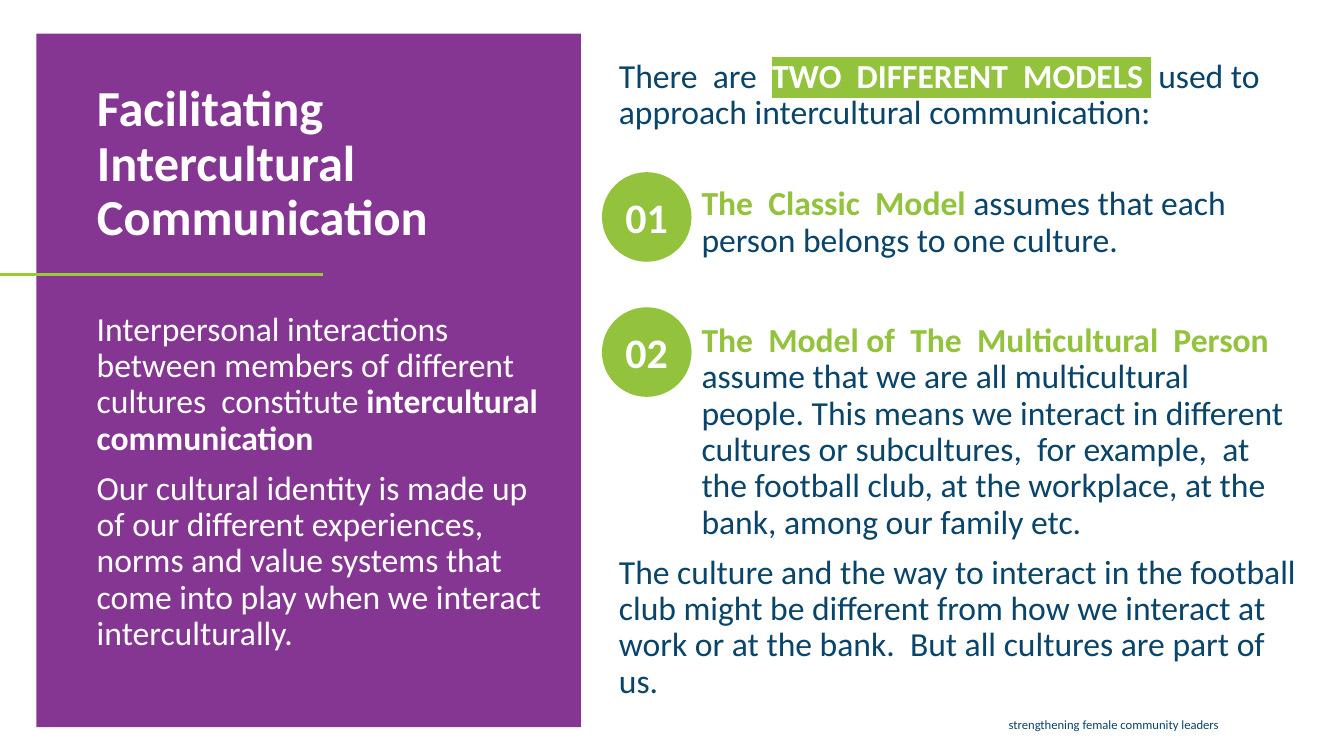
from dataclasses import dataclass

from lxml.etree import SubElement
from pptx import Presentation
from pptx.dml.color import RGBColor
from pptx.enum.shapes import MSO_CONNECTOR, MSO_SHAPE
from pptx.enum.text import MSO_ANCHOR, MSO_AUTO_SIZE, PP_ALIGN
from pptx.oxml import parse_xml
from pptx.oxml.ns import nsdecls, qn
from pptx.util import Pt

PURPLE = RGBColor(0x85, 0x36, 0x93)
GREEN = RGBColor(0x93, 0xC2, 0x3D)
LIME = RGBColor(0x99, 0xCB, 0x38)
NAVY = RGBColor(0x09, 0x44, 0x6A)
WHITE = RGBColor(0xFF, 0xFF, 0xFF)
FONT = "Calibri"


@dataclass(frozen=True)
class Span:
    text: str
    color: RGBColor = NAVY
    bold: bool = False
    highlight: RGBColor | None = None


@dataclass(frozen=True)
class Para:
    spans: tuple[Span, ...]
    before: float = 0
    indent: float = 0


@dataclass(frozen=True)
class Badge:
    label: str
    top: float


INTRODUCTION = (
    Para((
        Span("Interpersonal interactions between members of different  cultures  constitute ", WHITE),
        Span("intercultural  communication", WHITE, True),
    )),
    Para((
        Span("Our cultural identity is made up of our different experiences, norms and value "
             "systems that come into play when we interact interculturally.", WHITE),
    ), before=10),
)

MODELS = (
    Para((
        Span("There  are  "),
        Span("TWO  DIFFERENT  MODELS ", WHITE, True, GREEN),
        Span(" used to approach intercultural communication:"),
    )),
    Para((
        Span("The  Classic  Model ", GREEN, True),
        Span("assumes that each person belongs to one culture."),
    ), before=39, indent=59),
    Para((
        Span("The  Model of  The  Multicultural  Person ", GREEN, True),
        Span("assume that we are all multicultural people. This means we interact in different "
             "cultures or subcultures,  for example,  at the football club, at the workplace, "
             "at the bank, among our family etc."),
    ), before=46, indent=59),
    Para((
        Span("The culture and the way to interact in the football club might be different from "
             "how we interact at work or at the bank.  But all cultures are part of us."),
    ), before=10),
)

BADGES = (Badge("01", 123), Badge("02", 219.5))


def write_text(shape, paras: tuple[Para, ...], *, size: float, spacing: float = 0.9,
               align: PP_ALIGN = PP_ALIGN.LEFT, anchor: MSO_ANCHOR = MSO_ANCHOR.TOP) -> None:
    frame = shape.text_frame
    frame.word_wrap = True
    frame.auto_size = MSO_AUTO_SIZE.NONE
    frame.vertical_anchor = anchor
    for index, content in enumerate(paras):
        para = frame.add_paragraph() if index else frame.paragraphs[0]
        para.alignment = align
        para.line_spacing = spacing
        para.space_before = Pt(content.before)
        if content.indent:
            properties = para._p.get_or_add_pPr()
            properties.set("marL", str(Pt(content.indent)))
            properties.set("indent", "0")
        for span in content.spans:
            run = para.add_run()
            run.text = span.text
            run.font.name = FONT
            run.font.size = Pt(size)
            run.font.bold = span.bold
            run.font.color.rgb = span.color
            if span.highlight is not None:
                fill = run._r.rPr.find(qn("a:solidFill"))
                fill.addnext(parse_xml(
                    f'<a:highlight {nsdecls("a")}><a:srgbClr val="{span.highlight}"/></a:highlight>'))


def add_block(page, kind: MSO_SHAPE, left: float, top: float, width: float, height: float,
              color: RGBColor):
    block = page.shapes.add_shape(kind, Pt(left), Pt(top), Pt(width), Pt(height))
    block.shadow.inherit = False
    block.fill.solid()
    block.fill.fore_color.rgb = color
    block.line.fill.background()
    return block


def add_text(page, left: float, top: float, width: float, height: float,
             paras: tuple[Para, ...], *, size: float = 24, align: PP_ALIGN = PP_ALIGN.LEFT) -> None:
    box = page.shapes.add_textbox(Pt(left), Pt(top), Pt(width), Pt(height))
    write_text(box, paras, size=size, align=align)


def add_title(page, text: str, panel) -> None:
    title = page.shapes.title
    title.left, title.top, title.width, title.height = Pt(62), Pt(56), Pt(312), Pt(156)
    write_text(title, (Para((Span(text, WHITE, True),)),), size=36)
    title.element.addprevious(panel.element)


def add_rule(page, left: float, right: float, top: float) -> None:
    rule = page.shapes.add_connector(MSO_CONNECTOR.STRAIGHT, Pt(left), Pt(top), Pt(right), Pt(top))
    rule.line.color.rgb = LIME
    rule.line.width = Pt(2.25)
    SubElement(rule.element.spPr, qn("a:effectLst"))


def add_badge(page, badge: Badge) -> None:
    circle = add_block(page, MSO_SHAPE.OVAL, 430, badge.top, 64, 64, GREEN)
    write_text(circle, (Para((Span(badge.label, WHITE, True),)),), size=30, spacing=1.0,
               align=PP_ALIGN.CENTER, anchor=MSO_ANCHOR.MIDDLE)


def main() -> None:
    deck = Presentation()
    deck.slide_width, deck.slide_height = Pt(960), Pt(540)
    page = deck.slides.add_slide(deck.slide_layouts.get_by_name("Title Only"))

    panel = add_block(page, MSO_SHAPE.RECTANGLE, 26, 24, 389, 495.5, PURPLE)
    add_title(page, "Facilitating Intercultural Communication", panel)
    add_text(page, 100, 510, 777.5, 18, (Para((Span("strengthening female community leaders"),)),),
             size=9, align=PP_ALIGN.RIGHT)
    add_text(page, 435, 39, 499.5, 470, MODELS)
    add_text(page, 62, 219.5, 341.5, 255, INTRODUCTION)
    add_rule(page, 0, 231, 196)
    for badge in BADGES:
        add_badge(page, badge)

    deck.save("out.pptx")


if __name__ == "__main__":
    main()
